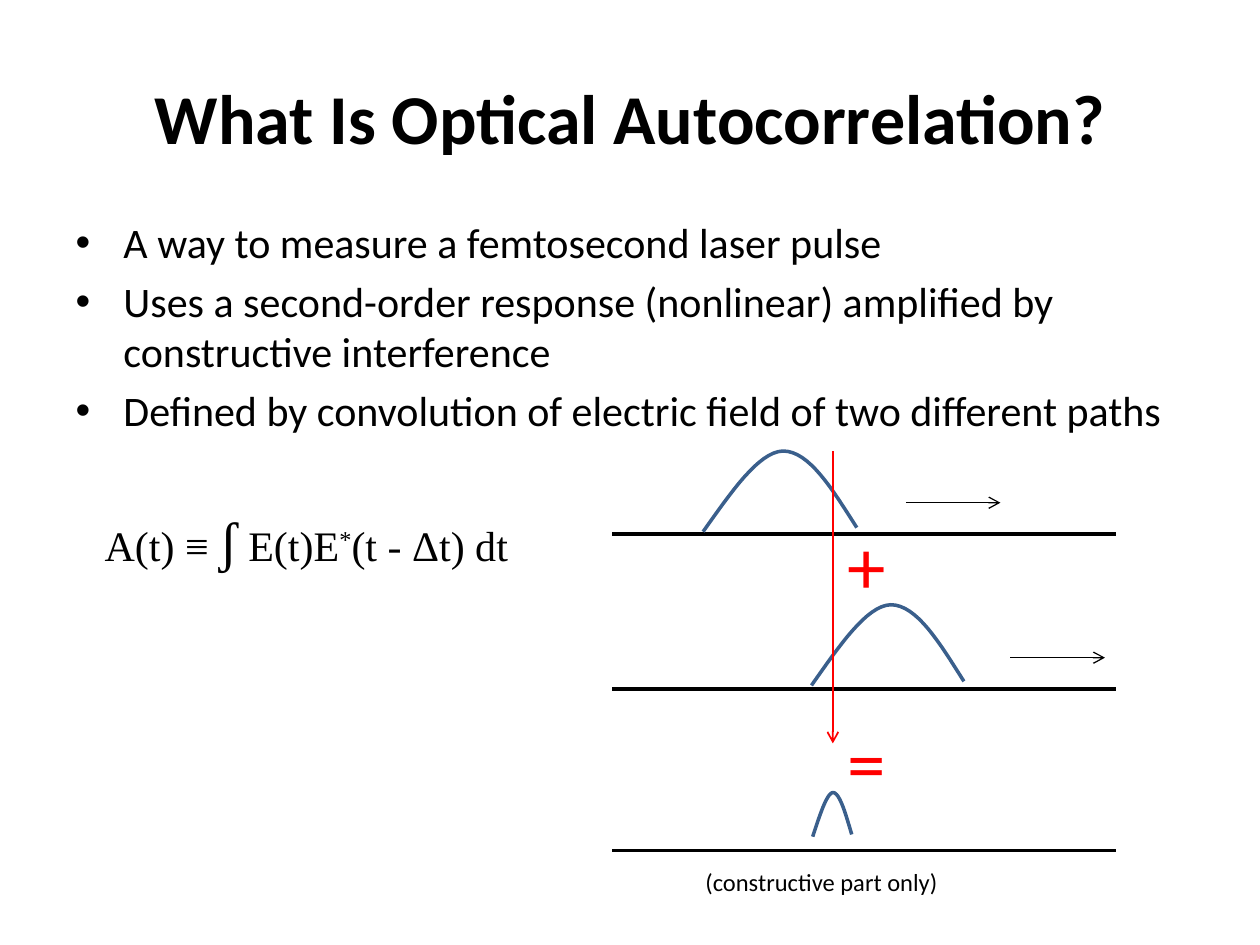
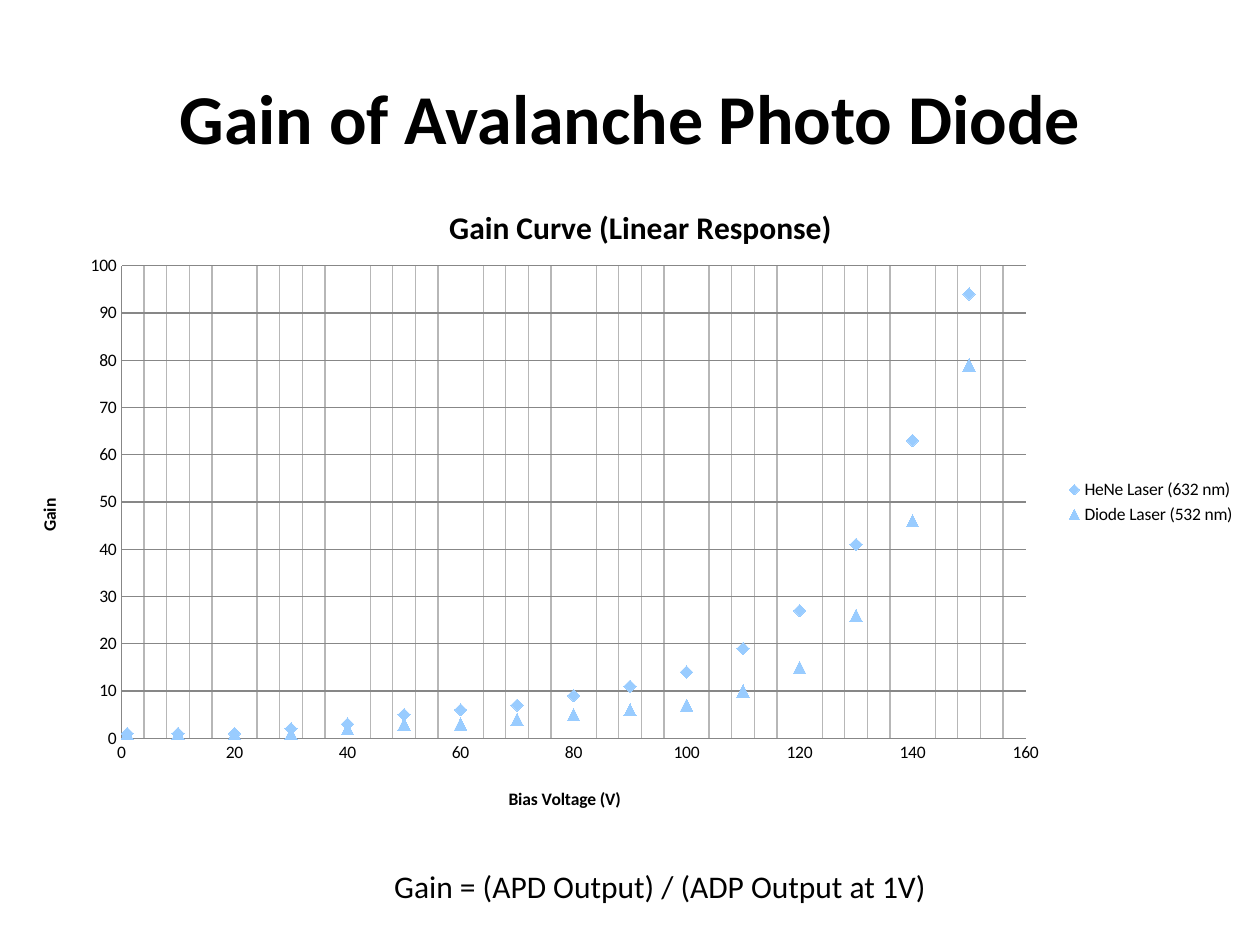
from lxml.etree import SubElement
from pptx import Presentation
from pptx.chart.data import XyChartData
from pptx.dml.color import RGBColor
from pptx.enum.chart import XL_CHART_TYPE, XL_LEGEND_POSITION, XL_MARKER_STYLE, XL_TICK_MARK
from pptx.enum.shapes import MSO_CONNECTOR
from pptx.enum.text import MSO_ANCHOR, PP_ALIGN
from pptx.oxml import parse_xml
from pptx.oxml.ns import nsdecls, qn
from pptx.util import Inches, Pt

BLACK = RGBColor(0x00, 0x00, 0x00)
RED = RGBColor(0xFF, 0x00, 0x00)
PULSE_BLUE = RGBColor(0x3A, 0x5F, 0x8C)
GRID_GREY = RGBColor(0x87, 0x87, 0x87)
MINOR_GREY = RGBColor(0xB7, 0xB7, 0xB7)
MARKER_BLUE = RGBColor(0x99, 0xCC, 0xFF)
SANS, SERIF = "Calibri", "Times New Roman"
TITLE_ONLY, TITLE_AND_BODY = 5, 1

BULLETS = [
    "A way to measure a femtosecond laser pulse",
    "Uses a second-order response (nonlinear) amplified by constructive interference",
    "Defined by convolution of electric field of two different paths",
]
FORMULA = [("A(t) ≡ ", 24, 0), ("ʃ", 32, 0), (" E(t)E", 24, 0), ("*", 24, 30000),
           ("(t - Δt) dt", 24, 0)]

# Two Bezier arcs in fractions of the pulse's box
PULSE_ARCS = [
    [(0, 1), (0.18, 0.52), (0.36, 0.01), (0.52, 0)],
    [(0.52, 0), (0.69, 0), (0.84, 0.47), (1, 0.95)],
]

BIAS_VOLTAGES = [1] + list(range(10, 151, 10))
GAINS = [
    ("HeNe Laser (632 nm)", XL_MARKER_STYLE.DIAMOND,
     [1, 1, 1, 2, 3, 5, 6, 7, 9, 11, 14, 19, 27, 41, 63, 94]),
    ("Diode Laser (532 nm)", XL_MARKER_STYLE.TRIANGLE,
     [1, 1, 1, 1, 2, 3, 3, 4, 5, 6, 7, 10, 15, 26, 46, 79]),
]


# Shared parts
def place(shape, left, top, width, height):
    shape.left, shape.top = Inches(left), Inches(top)
    shape.width, shape.height = Inches(width), Inches(height)


def style_font(font, size, color=BLACK, name=SANS, bold=False):
    font.size, font.name, font.bold = Pt(size), name, bold
    font.color.rgb = color


def add_run(paragraph, text, size, color=BLACK, name=SANS, bold=False):
    run = paragraph.add_run()
    run.text = text
    style_font(run.font, size, color, name, bold)
    return run


def add_titled_slide(prs, layout, heading):
    slide = prs.slides.add_slide(prs.slide_layouts[layout])
    title = slide.shapes.title
    place(title, 0.5, 0.3, 9, 1.25)
    title.text_frame.vertical_anchor = MSO_ANCHOR.MIDDLE
    paragraph = title.text_frame.paragraphs[0]
    paragraph.alignment = PP_ALIGN.CENTER
    add_run(paragraph, heading, 40, bold=True)
    return slide


def add_label(slide, text, box, size, color=BLACK):
    label = slide.shapes.add_textbox(*map(Inches, box))
    label.text_frame.word_wrap = False
    add_run(label.text_frame.paragraphs[0], text, size, color)


def add_line(slide, start, end, width, color=BLACK, arrow=False):
    line = slide.shapes.add_connector(MSO_CONNECTOR.STRAIGHT, *map(Inches, start + end))
    line.line.width = Pt(width)
    line.line.color.rgb = color
    properties = line.line._get_or_add_ln()
    if arrow:
        SubElement(properties, qn("a:tailEnd"), type="arrow")
    SubElement(properties.getparent(), qn("a:effectLst"))


# Definition slide
def indent(paragraph, left, first):
    properties = paragraph._p.get_or_add_pPr()
    properties.set("marL", str(Inches(left)))
    properties.set("indent", str(Inches(first)))
    return properties


def fill_definition(body):
    place(body, 0.5, 1.67, 9, 4.95)
    frame = body.text_frame
    for number, bullet in enumerate(BULLETS):
        paragraph = frame.add_paragraph() if number else frame.paragraphs[0]
        indent(paragraph, 0.38, -0.38)
        add_run(paragraph, bullet, 24)
    formula = frame.add_paragraph()
    formula.space_before = Pt(40)
    SubElement(indent(formula, 0.23, 0), qn("a:buNone"))
    for text, size, baseline in FORMULA:
        run = add_run(formula, text, size, name=SERIF)
        if baseline:
            run.font._element.set("baseline", str(baseline))


def bezier_point(arc, t):
    weights = ((1 - t) ** 3, 3 * t * (1 - t) ** 2, 3 * t * t * (1 - t), t ** 3)
    return tuple(sum(w * p[axis] for w, p in zip(weights, arc)) for axis in (0, 1))


def add_pulse(slide, left, top, width, height, steps=16):
    points = [bezier_point(arc, i / steps) for arc in PULSE_ARCS for i in range(steps + 1)]
    outline = [(Inches(left + width * x), Inches(top + height * y)) for x, y in points]
    builder = slide.shapes.build_freeform(*outline[0])
    builder.add_line_segments(outline[1:], close=False)
    pulse = builder.convert_to_shape()
    pulse.shadow.inherit = False
    pulse.fill.background()
    pulse.line.color.rgb = PULSE_BLUE
    pulse.line.width = Pt(2)


def add_pulse_sum(slide, left, top):
    # Baselines, pulses and their direction of travel
    for y in (0.66, 1.89, 3.17):
        add_line(slide, (left, top + y), (left + 4, top + y), 2.25)
    for x, y, width, height in ((0.72, 0, 1.22, 0.64), (1.58, 1.22, 1.21, 0.64),
                                (1.59, 2.71, 0.31, 0.35)):
        add_pulse(slide, left + x, top + y, width, height)
    for x, y in ((2.33, 0.41), (3.16, 1.64)):
        add_line(slide, (left + x, top + y), (left + x + 0.75, top + y), 0.75, arrow=True)
    # Moment at which the pulses are added
    add_line(slide, (left + 1.75, top), (left + 1.75, top + 2.32), 1, RED, arrow=True)
    for sign, y in (("+", 0.48), ("=", 2.04)):
        add_label(slide, sign, (left + 1.77, top + y, 0.51, 0.84), 44, RED)
    add_label(slide, "(constructive part only)", (left + 0.64, top + 3.25, 2.07, 0.34), 14)


# Gain slide
def set_layout(element, index, inner=False, **fractions):
    for old in element.findall(qn("c:layout")):
        element.remove(old)
    layout = parse_xml(f"<c:layout {nsdecls('c')}><c:manualLayout/></c:layout>")
    manual = layout[0]
    if inner:
        SubElement(manual, qn("c:layoutTarget"), val="inner")
    for axis in ("x", "y"):
        SubElement(manual, qn(f"c:{axis}Mode"), val="edge")
    for key, value in fractions.items():
        SubElement(manual, qn(f"c:{key}"), val=str(value))
    element.insert(index, layout)


def write_chart_title(title, text, size, x, y):
    add_run(title.text_frame.paragraphs[0], text, size, bold=True)
    set_layout(title._element, 1, x=x, y=y)


def style_axis(axis, text, maximum, step, x, y):
    axis.minimum_scale, axis.maximum_scale, axis.major_unit = 0, maximum, step
    axis.major_tick_mark = axis.minor_tick_mark = XL_TICK_MARK.NONE
    axis.format.line.color.rgb = GRID_GREY
    axis.tick_labels.number_format = "General"
    axis.tick_labels.number_format_is_linked = False
    write_chart_title(axis.axis_title, text, 10, x, y)


def add_minor_grid(axis, unit):
    axis.has_minor_gridlines = True
    axis.minor_unit = unit
    grid = axis._element.find(qn("c:minorGridlines"))
    grid.append(parse_xml(
        f'<c:spPr {nsdecls("c", "a")}><a:ln w="{Pt(0.75)}"><a:solidFill>'
        f'<a:srgbClr val="{MINOR_GREY}"/></a:solidFill></a:ln></c:spPr>'))


def add_gain_chart(slide, left, top, width, height):
    data = XyChartData()
    for name, _, gains in GAINS:
        laser = data.add_series(name)
        for voltage, gain in zip(BIAS_VOLTAGES, gains):
            laser.add_data_point(voltage, gain)
    chart = slide.shapes.add_chart(XL_CHART_TYPE.XY_SCATTER, *map(Inches, (left, top, width, height)),
                                   data).chart
    style_font(chart.font, 10)
    chart.has_title = True
    write_chart_title(chart.chart_title, "Gain Curve (Linear Response)", 18, 0.35, 0.04)
    chart.has_legend = True
    chart.legend.position = XL_LEGEND_POSITION.RIGHT
    chart.legend.include_in_layout = False

    # Axes and grid
    voltage_axis, gain_axis = chart.category_axis, chart.value_axis
    style_axis(voltage_axis, "Bias Voltage (V)", 160, 20, 0.4, 0.93)
    style_axis(gain_axis, "Gain", 100, 10, 0.02, 0.49)
    voltage_axis.has_major_gridlines = False
    add_minor_grid(voltage_axis, 4)
    gain_axis.has_major_gridlines = True
    gain_axis.major_gridlines.format.line.color.rgb = GRID_GREY
    gain_axis.major_gridlines.format.line.width = Pt(0.75)
    plot_area = chart._chartSpace.chart.plotArea
    set_layout(plot_area, 0, inner=True, x=0.09, y=0.14, w=0.73, h=0.72)

    # Markers without connecting lines
    for laser, (_, symbol, _) in zip(chart.plots[0].series, GAINS):
        laser.smooth = False
        laser.format.line.fill.background()
        laser.marker.style = symbol
        laser.marker.size = 7
        laser.marker.format.fill.solid()
        laser.marker.format.fill.fore_color.rgb = MARKER_BLUE
        laser.marker.format.line.fill.background()


def main():
    prs = Presentation()
    prs.slide_width, prs.slide_height = Inches(10), Inches(7.5)

    definition = add_titled_slide(prs, TITLE_AND_BODY, "What Is Optical Autocorrelation?")
    fill_definition(definition.placeholders[1])
    add_pulse_sum(definition, 4.86, 3.58)

    gain = add_titled_slide(prs, TITLE_ONLY, "Gain of Avalanche Photo Diode")
    add_label(gain, "Gain = (APD Output) / (ADP Output at 1V)", (3.03, 6.83, 4.48, 0.4), 18)
    add_gain_chart(gain, 0.08, 1.38, 9.83, 5.21)

    prs.save("out.pptx")


if __name__ == "__main__":
    main()
